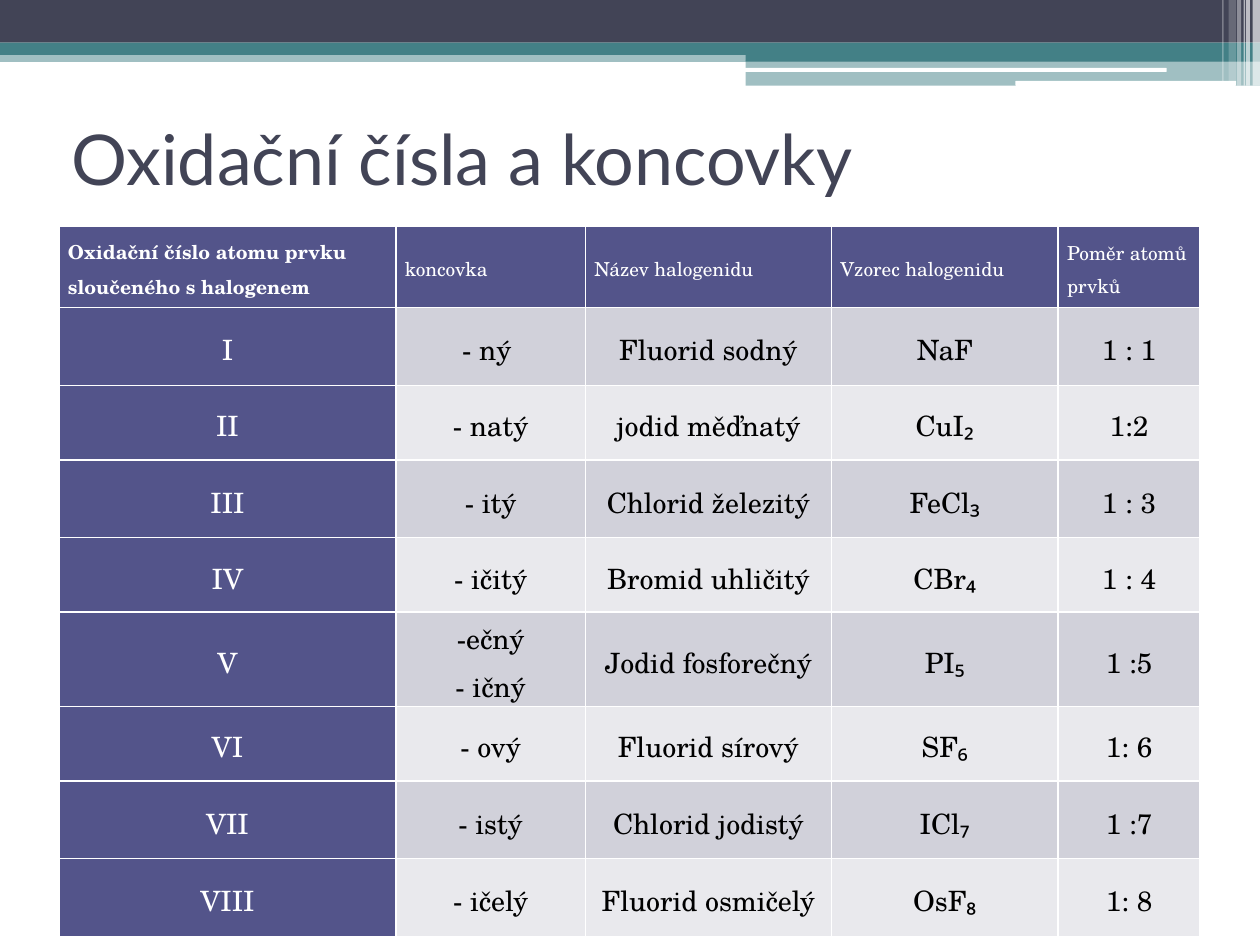
import pptx
import pptx.dml.color
import pptx.enum.shapes
import pptx.enum.text
import pptx.oxml
import pptx.oxml.ns
import pptx.util

Cm = pptx.util.Cm
Pt = pptx.util.Pt
SHAPES = pptx.enum.shapes.MSO_SHAPE
MIDDLE = pptx.enum.text.MSO_ANCHOR.MIDDLE
CENTER = pptx.enum.text.PP_ALIGN.CENTER
LEFT = pptx.enum.text.PP_ALIGN.LEFT

DARK, TEAL, WHITE, BLACK = "424456", "438086", "FFFFFF", "000000"
PURPLE, BAND_COLORS = "53548A", ("D1D1DA", "E9E9ED")
TABLE_FONT = "TeX Gyre Schola"

# Banner: left, top, width, height (cm), colour, opacity in percent
BANNER_BARS = [
    (0, 1.02, 25.4, 0.23, TEAL, 50),
    (0, 0, 25.4, 0.86, DARK, 100),
    (0, 0.86, 25.4, 0.25, TEAL, 100),
    (15.03, 0.99, 10.37, 0.25, TEAL, 100),
    (15.03, 1.22, 10.37, 0.51, TEAL, 50),
]
BANNER_SLOTS = [(15.01, 1.37, 8.51, 0.08), (20.47, 1.63, 4.45, 0.1)]
# Stripes: left, width, height (cm), opacity in percent
BANNER_STRIPES = [
    (25.25, 0.15, 1.73, 65),
    (25.12, 0.08, 1.73, 65),
    (25.07, 0.03, 1.73, 60),
    (24.94, 0.08, 1.73, 40),
    (24.77, 0.15, 1.63, 20),
    (24.64, 0.03, 1.63, 30),
]

# The row with two endings is tall enough for both lines
COLUMN_WIDTHS = (6.79, 3.82, 4.96, 4.57, 2.86)
ROW_HEIGHTS = (1.63, 1.57, 1.5, 1.57, 1.5, 1.9, 1.5, 1.57, 1.57)
TABLE_ROWS = [
    ("Oxidační číslo atomu prvku\nsloučeného s halogenem", "koncovka",
     "Název halogenidu", "Vzorec halogenidu", "Poměr atomů prvků"),
    ("I", "- ný ", "Fluorid sodný", "NaF", "1 : 1"),
    ("II", "- natý", "jodid měďnatý", "CuI₂", "1:2"),
    ("III", "- itý", "Chlorid železitý", "FeCl₃", "1 : 3"),
    ("IV", "- ičitý", "Bromid uhličitý", "CBr₄", "1 : 4"),
    ("V", "-ečný\n- ičný", "Jodid fosforečný", "PI₅", "1 :5"),
    ("VI", "- ový", "Fluorid sírový", "SF₆", "1: 6"),
    ("VII", "- istý", "Chlorid jodistý", "ICl₇", "1 :7"),
    ("VIII", "- ičelý", "Fluorid osmičelý", "OsF₈", "1: 8"),
]


def color(hex_string):
    return pptx.dml.color.RGBColor.from_string(hex_string)


def set_attributes(target, values):
    for name, value in values.items():
        setattr(target, name, value)


def write_text(text_frame, text, font_color, font_values, paragraph_values):
    text_frame.text = text
    for paragraph in text_frame.paragraphs:
        set_attributes(paragraph, paragraph_values)
        for run in paragraph.runs:
            set_attributes(run.font, font_values)
            run.font.color.rgb = color(font_color)


def add_bar(slide, left, top, width, height, fill, opacity=100, kind=SHAPES.RECTANGLE):
    shape = slide.shapes.add_shape(kind, Cm(left), Cm(top), Cm(width), Cm(height))
    shape.shadow.inherit = False
    shape.line.fill.background()
    shape.fill.solid()
    shape.fill.fore_color.rgb = color(fill)
    if opacity < 100:
        fill_color = shape.fill._xPr.find(".//" + pptx.oxml.ns.qn("a:srgbClr"))
        fill_color.append(pptx.oxml.parse_xml(
            f'<a:alpha {pptx.oxml.ns.nsdecls("a")} val="{opacity * 1000}"/>'))


def add_banner(slide):
    for bar in BANNER_BARS:
        add_bar(slide, *bar)
    for slot in BANNER_SLOTS:
        add_bar(slide, *slot, WHITE, kind=SHAPES.ROUNDED_RECTANGLE)
    for left, width, height, opacity in BANNER_STRIPES:
        add_bar(slide, left, 0, width, height, WHITE, opacity)


def add_title(slide, text):
    shape = slide.shapes.add_textbox(Cm(1.19), Cm(1.98), Cm(22.86), Cm(2.39))
    set_attributes(shape.text_frame, {"word_wrap": True, "vertical_anchor": MIDDLE})
    write_text(shape.text_frame, text, DARK,
               {"name": "Lato", "size": Pt(40)}, {"alignment": LEFT})


def set_borders(cell):
    properties = cell._tc.get_or_add_tcPr()
    for side in "LRTB":
        properties.append(pptx.oxml.parse_xml(
            f'<a:ln{side} {pptx.oxml.ns.nsdecls("a")} w="{Pt(1)}"><a:solidFill>'
            f'<a:srgbClr val="{WHITE}"/></a:solidFill></a:ln{side}>'))


def format_cell(cell, text, row, column):
    is_header = row == 0
    is_purple = is_header or column == 0
    set_attributes(cell, {
        "margin_left": Cm(0.18), "margin_right": Cm(0.18),
        "margin_top": 0, "margin_bottom": 0, "vertical_anchor": MIDDLE,
    })
    # Borders come before the fill in the cell properties
    set_borders(cell)
    cell.fill.solid()
    cell.fill.fore_color.rgb = color(PURPLE if is_purple else BAND_COLORS[(row - 1) % 2])
    write_text(
        cell.text_frame, text, WHITE if is_purple else BLACK,
        {"name": TABLE_FONT, "size": Pt(11 if is_header else 16),
         "bold": is_header and column == 0},
        {"alignment": LEFT if is_header else CENTER, "line_spacing": 1.15},
    )


def add_halide_table(slide):
    table = slide.shapes.add_table(
        len(TABLE_ROWS), len(COLUMN_WIDTHS), Cm(1.19), Cm(4.57),
        Cm(sum(COLUMN_WIDTHS)), Cm(sum(ROW_HEIGHTS))).table
    set_attributes(table, {"first_row": False, "horz_banding": False})
    for column, width in zip(table.columns, COLUMN_WIDTHS):
        column.width = Cm(width)
    for row, height in zip(table.rows, ROW_HEIGHTS):
        row.height = Cm(height)
    for row_index, texts in enumerate(TABLE_ROWS):
        for column_index, text in enumerate(texts):
            format_cell(table.cell(row_index, column_index), text, row_index, column_index)


def main():
    presentation = pptx.Presentation()
    set_attributes(presentation, {"slide_width": Cm(25.4), "slide_height": Cm(19.05)})
    slide = presentation.slides.add_slide(presentation.slide_layouts[6])
    add_banner(slide)
    add_title(slide, "Oxidační čísla a koncovky")
    add_halide_table(slide)
    presentation.save("out.pptx")


if __name__ == "__main__":
    main()
